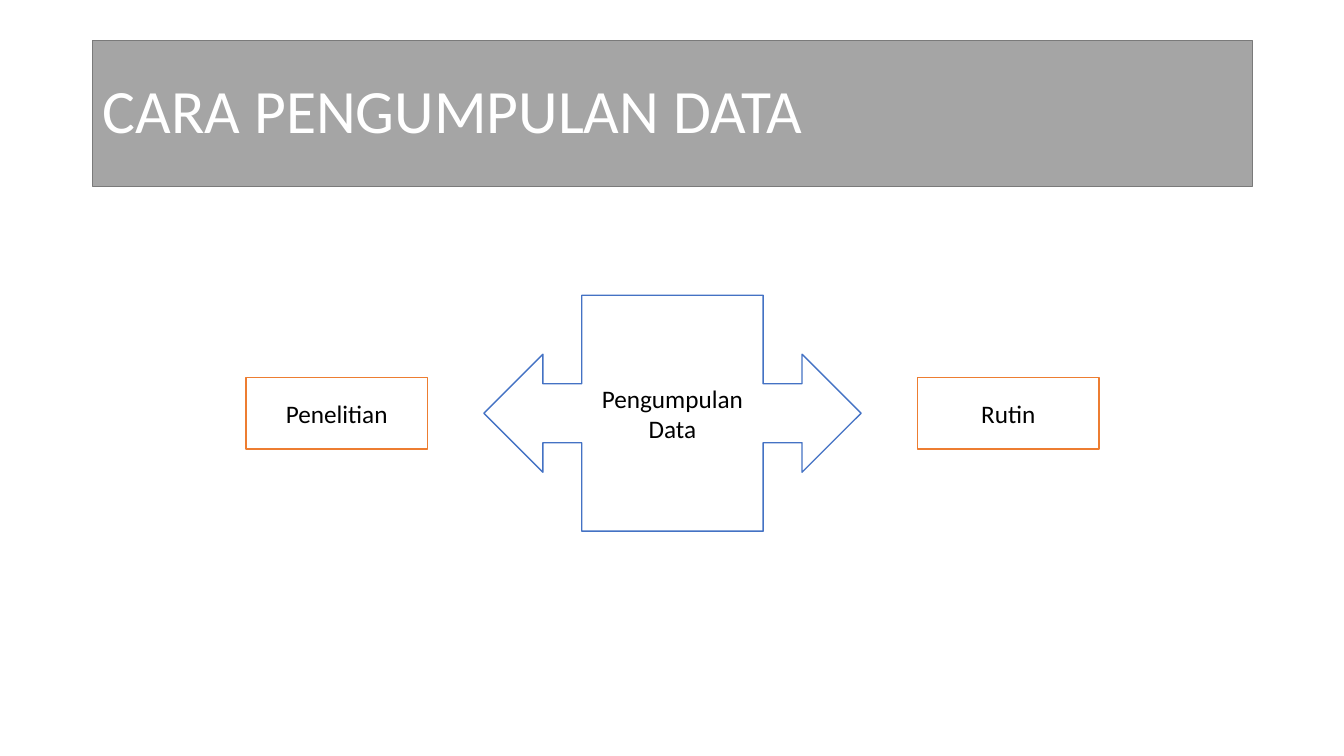
from pptx import Presentation
from pptx.dml.color import RGBColor
from pptx.enum.shapes import MSO_SHAPE
from pptx.enum.text import MSO_ANCHOR, MSO_AUTO_SIZE, PP_ALIGN
from pptx.util import Inches, Pt

RECTANGLE = MSO_SHAPE.RECTANGLE
CALLOUT = MSO_SHAPE.LEFT_RIGHT_ARROW_CALLOUT
MIDDLE = MSO_ANCHOR.MIDDLE
LEFT, CENTER = PP_ALIGN.LEFT, PP_ALIGN.CENTER
NO_AUTOFIT = MSO_AUTO_SIZE.NONE

# Content
HEADING = "CARA PENGUMPULAN DATA"
TOPIC = "Pengumpulan Data"
METHODS = ["Penelitian", "Rutin"]

THEME = {
    "font": "Calibri", "heading_size": 44, "body_size": 18, "line_width": 1,
    "white": "FFFFFF", "black": "000000", "band": "A5A5A5",
    "band_line": "7A7A7A", "topic_line": "4472C4", "method_line": "ED7D31",
}

# Layout, in inches
SLIDE_W, SLIDE_H = 13.33, 7.5
BAND = (0.92, 0.4, 11.5, 1.45)
CENTER_X, CENTER_Y = 6.67, 4.1
TOPIC_SIZE = (3.74, 2.34)
METHOD_SIZE = (1.8, 0.71)
METHOD_OFFSET = 3.33


def color(name):
    return RGBColor.from_string(THEME[name])


def dress(shape, text, fill, line, ink, size, align):
    shape.fill.solid()
    shape.fill.fore_color.rgb = color(fill)
    shape.line.color.rgb = color(line)
    shape.line.width = Pt(THEME["line_width"])
    frame = shape.text_frame
    frame.text = text
    frame.word_wrap = True
    frame.auto_size = NO_AUTOFIT
    frame.vertical_anchor = MIDDLE
    paragraph = frame.paragraphs[0]
    paragraph.alignment = align
    font = paragraph.runs[0].font
    font.name = THEME["font"]
    font.size = Pt(THEME[size])
    font.color.rgb = color(ink)


def add_node(slide, kind, text, center_x, size, line):
    width, height = size
    node = slide.shapes.add_shape(
        kind, Inches(center_x - width / 2), Inches(CENTER_Y - height / 2),
        Inches(width), Inches(height))
    node.shadow.inherit = False
    dress(node, text, "white", line, "black", "body_size", CENTER)


def main():
    deck = Presentation()
    deck.slide_width, deck.slide_height = Inches(SLIDE_W), Inches(SLIDE_H)
    slide = deck.slides.add_slide(deck.slide_layouts[5])

    # Heading band
    heading = slide.shapes.title
    heading.left, heading.top, heading.width, heading.height = map(Inches, BAND)
    dress(heading, HEADING, "band", "band_line", "white", "heading_size", LEFT)
    heading.text_frame.paragraphs[0].line_spacing = 0.9

    # Topic pointing both ways
    add_node(slide, CALLOUT, TOPIC, CENTER_X, TOPIC_SIZE, "topic_line")

    # One method on each side
    for method, side in zip(METHODS, (-1, 1)):
        add_node(slide, RECTANGLE, method, CENTER_X + side * METHOD_OFFSET,
                 METHOD_SIZE, "method_line")

    deck.save("out.pptx")


if __name__ == "__main__":
    main()
